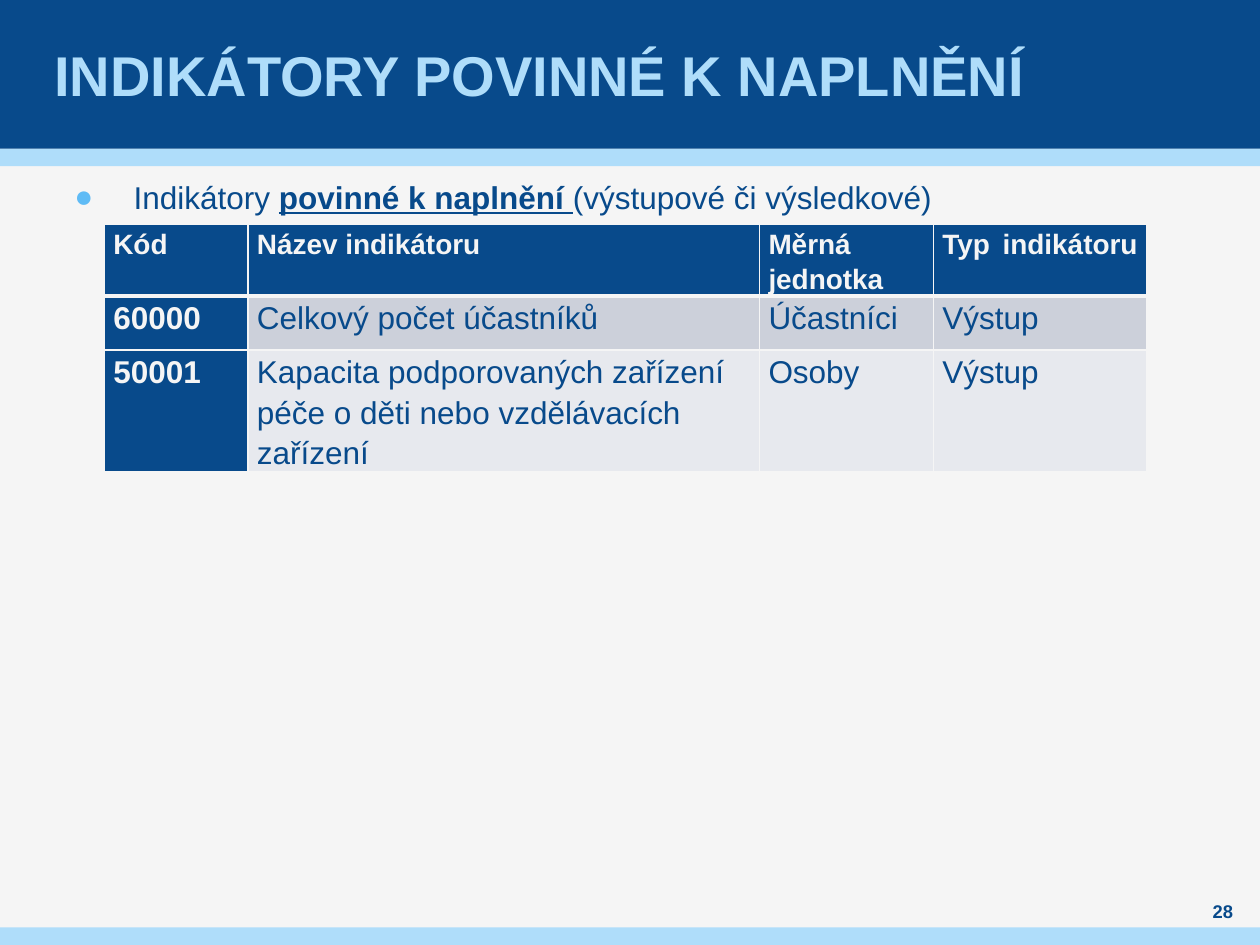
"""Build the slide listing the indicators that must be met."""
from lxml import etree
from pptx import Presentation
from pptx.dml.color import RGBColor
from pptx.enum.shapes import MSO_SHAPE
from pptx.enum.text import MSO_ANCHOR, MSO_AUTO_SIZE, PP_ALIGN
from pptx.oxml.ns import qn
from pptx.util import Inches, Pt

RECTANGLE = MSO_SHAPE.RECTANGLE
MIDDLE = MSO_ANCHOR.MIDDLE
LEFT, CENTER, JUSTIFY = PP_ALIGN.LEFT, PP_ALIGN.CENTER, PP_ALIGN.JUSTIFY
NO_AUTOFIT = MSO_AUTO_SIZE.NONE
COLORS = {"navy": "084A8B", "sky": "AFDDFA", "bullet": "5FBBF5",
          "paper": "F5F5F5", "band_dark": "CCD0DA", "band_light": "E7E9EE"}
TITLE_ONLY = 5


def style_run(run, size, color, bold=False):
    run.font.name = "Arial"
    run.font.size = Pt(size)
    run.font.bold = bold
    run.font.color.rgb = RGBColor.from_string(COLORS[color])


def set_frame(frame, side=0, anchor=None):
    frame.word_wrap = True
    frame.auto_size = NO_AUTOFIT
    frame.margin_left = frame.margin_right = Inches(side)
    frame.margin_top = frame.margin_bottom = 0
    if anchor is not None:
        frame.vertical_anchor = anchor


prs = Presentation()
prs.slide_width, prs.slide_height = Inches(10), Inches(7.5)
width, height = prs.slide_width, prs.slide_height
slide = prs.slides.add_slide(prs.slide_layouts[TITLE_ONLY])
slide.background.fill.solid()
slide.background.fill.fore_color.rgb = RGBColor.from_string(COLORS["paper"])

header_height, stripe_height = Inches(1.18), Inches(0.14)
for top, band_height, color in [
    (header_height, stripe_height, "sky"),
    (0, header_height, "navy"),
    (height - stripe_height, stripe_height, "sky"),
]:
    band = slide.shapes.add_shape(RECTANGLE, 0, top, width, band_height)
    band.shadow.inherit = False
    band.fill.solid()
    band.fill.fore_color.rgb = RGBColor.from_string(COLORS[color])
    band.line.fill.background()

title = slide.shapes.title
title.element.getparent().append(title.element)
title.left, title.top = Inches(0.39), 0
title.width, title.height = Inches(9.21), header_height
title.text_frame.text = "INDIKÁTORY POVINNÉ K NAPLNĚNÍ"
set_frame(title.text_frame, 0.04, MIDDLE)
heading = title.text_frame.paragraphs[0]
heading.alignment = LEFT
style_run(heading.runs[0], 32, "sky", True)

intro = slide.shapes.add_textbox(Inches(0.59), Inches(1.31), Inches(8.82), Inches(5.38))
set_frame(intro.text_frame)
statement = intro.text_frame.paragraphs[0]
statement.line_spacing = Pt(28.8)
statement.space_before = statement.space_after = Pt(6)
for wording, stressed in [("Indikátory ", False), ("povinné k\u00a0naplnění ", True),
                          ("(výstupové či výsledkové)", False)]:
    run = statement.add_run()
    run.text = wording
    style_run(run, 18, "navy", stressed)
    run.font.underline = stressed
bullet_props = statement._p.get_or_add_pPr()
bullet_props.set("marL", str(Inches(0.47)))
bullet_props.set("indent", str(-Inches(0.47)))
bullet_color = etree.SubElement(bullet_props, qn("a:buClr"))
etree.SubElement(bullet_color, qn("a:srgbClr"), val=COLORS["bullet"])
etree.SubElement(bullet_props, qn("a:buFont"), typeface="Arial")
etree.SubElement(bullet_props, qn("a:buChar"), char="●")

page_number = slide.shapes.add_textbox(Inches(9.45), Inches(7.13), Inches(0.51), Inches(0.2))
page_number.text_frame.text = "28"
set_frame(page_number.text_frame, 0, MIDDLE)
page_number.text_frame.paragraphs[0].alignment = CENTER
style_run(page_number.text_frame.paragraphs[0].runs[0], 10.5, "navy", True)

indicators = [
    ["Kód", "Název indikátoru ", "Měrná jednotka ", "Typ indikátoru "],
    ["60000", "Celkový počet účastníků", "Účastníci", "Výstup"],
    ["50001", "Kapacita podporovaných zařízení péče o děti nebo vzdělávacích zařízení",
     "Osoby", "Výstup"],
]
row_fills = ["navy", "band_dark", "band_light"]
column_widths = [1.14, 4.06, 1.38, 1.69]
row_height = Inches(0.43)
table = slide.shapes.add_table(len(indicators), len(column_widths), Inches(0.83), Inches(1.78),
                               Inches(sum(column_widths)), row_height * len(indicators)).table
for column, column_width in zip(table.columns, column_widths):
    column.width = Inches(column_width)

for r, (row, row_fill) in enumerate(zip(indicators, row_fills)):
    table.rows[r].height = row_height
    for c, wording in enumerate(row):
        cell = table.cell(r, c)
        is_header, is_label = r == 0, r == 0 or c == 0
        cell.margin_left = cell.margin_right = Inches(0.07)
        cell.margin_top = cell.margin_bottom = 0
        cell_props = cell._tc.get_or_add_tcPr()
        for side in "LRTB":
            thick = (is_header and side == "B") or (r == 1 and side == "T")
            border = etree.SubElement(cell_props, qn(f"a:ln{side}"), w=str(Pt(3 if thick else 1)))
            border_fill = etree.SubElement(border, qn("a:solidFill"))
            etree.SubElement(border_fill, qn("a:srgbClr"), val=COLORS["paper"])
        cell.fill.solid()
        cell.fill.fore_color.rgb = RGBColor.from_string(COLORS["navy" if is_label else row_fill])
        cell.text_frame.text = wording
        entry = cell.text_frame.paragraphs[0]
        entry.alignment = JUSTIFY if is_header else LEFT
        entry.line_spacing = 1.15
        entry.space_after = Pt(6)
        style_run(entry.runs[0], 16 if is_header else 18, "paper" if is_label else "navy", is_label)

prs.save("out.pptx")
